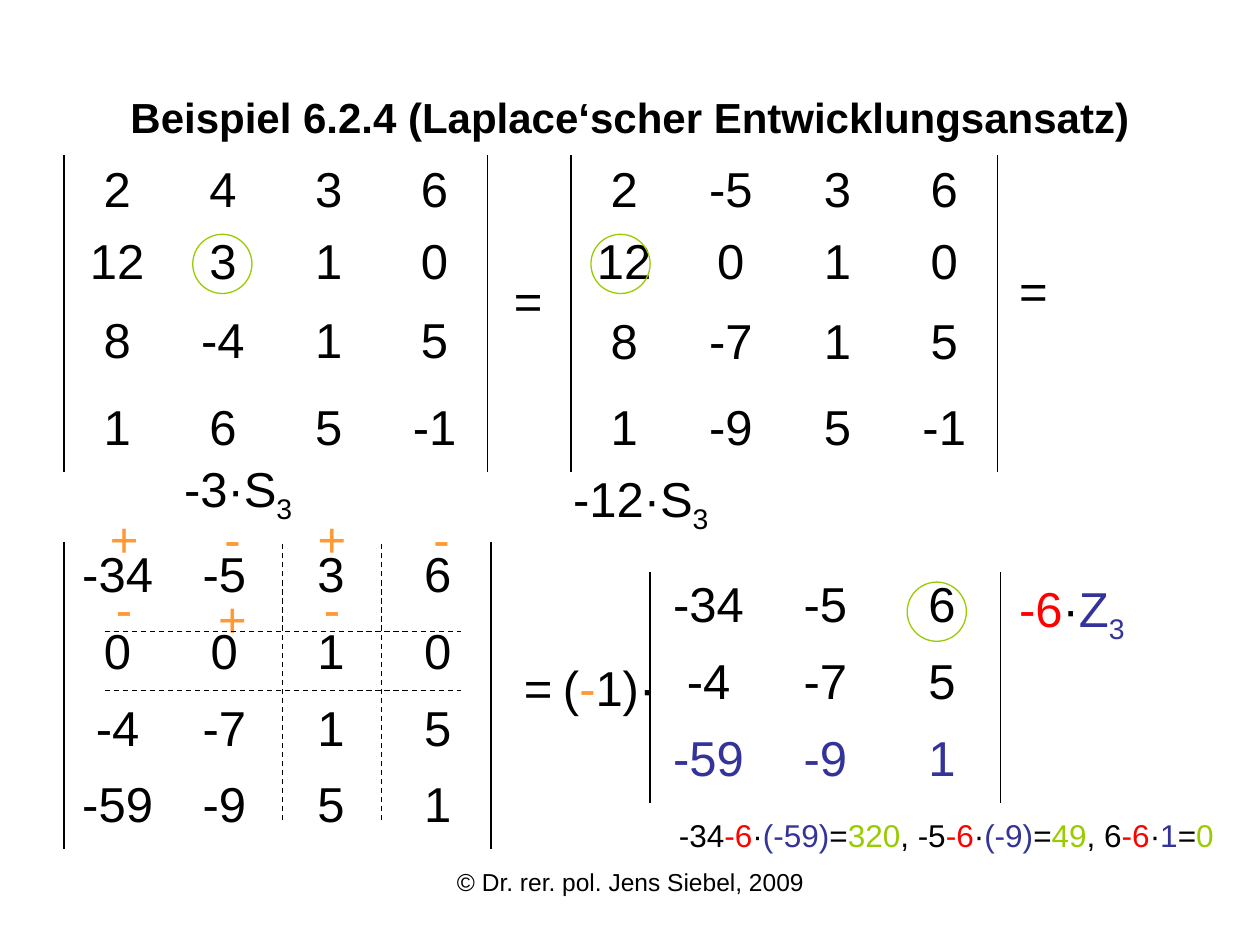
from pptx import Presentation
from pptx.dml.color import RGBColor
from pptx.enum.dml import MSO_LINE
from pptx.enum.shapes import MSO_CONNECTOR, MSO_SHAPE
from pptx.enum.text import MSO_ANCHOR, PP_ALIGN
from pptx.oxml import parse_xml
from pptx.oxml.ns import nsdecls, qn
from pptx.util import Inches, Pt
from lxml.etree import SubElement

BLACK = RGBColor(0x00, 0x00, 0x00)
RED = RGBColor(0xFF, 0x00, 0x00)
BLUE = RGBColor(0x33, 0x33, 0x99)
GREEN = RGBColor(0x99, 0xCC, 0x00)
ORANGE = RGBColor(0xFF, 0x99, 0x33)

LEFT, MID, RIGHT = PP_ALIGN.LEFT, PP_ALIGN.CENTER, PP_ALIGN.RIGHT
COLS, ROWS = 100, 75  # slide grid, ten cells to the inch


class Board:
    """Style and current slide; places are columns and rows of the grid."""

    font = "Arial"
    size = 28
    thin = Pt(0.75)

    def __init__(self, deck):
        self.slide = deck.slides.add_slide(deck.slide_layouts[6])
        self.shapes = self.slide.shapes
        self.dx = deck.slide_width / COLS
        self.dy = deck.slide_height / ROWS

    def place(self, x, y, w, h):
        return (round(x * self.dx), round(y * self.dy),
                round(w * self.dx), round(h * self.dy))

    def letter(self, para, runs, align, size, bold=False):
        """Each run is (text, colour) or (text, colour, 'sub')."""
        para.alignment = align
        para.font.name, para.font.size, para.font.bold = self.font, Pt(size), bold
        for text, color, *low in runs:
            run = para.add_run()
            run.text = text
            run.font.color.rgb = color
            if low:
                run.font._element.set("baseline", "-25000")

    def text(self, x, y, w, h, *runs, align=LEFT, size=size, bold=False,
             anchor=MSO_ANCHOR.TOP):
        frame = self.shapes.add_textbox(*self.place(x, y, w, h)).text_frame
        frame.word_wrap = True
        frame.vertical_anchor = anchor
        self.letter(frame.paragraphs[0], runs, align, size, bold)

    def border(self, cell, sides):
        props = cell._tc.get_or_add_tcPr()
        for side in "LRTB":
            if side in sides:
                xml = ('<a:ln%s %s w="12700"><a:solidFill><a:srgbClr val="%s"/>'
                       '</a:solidFill></a:ln%s>')
                props.append(parse_xml(xml % (side, nsdecls("a"), BLACK, side)))
            else:
                xml = '<a:ln%s %s w="0"><a:noFill/></a:ln%s>'
                props.append(parse_xml(xml % (side, nsdecls("a"), side)))

    def det(self, x, y, wide, highs, rows, anchor=MSO_ANCHOR.TOP, tints={}):
        """Determinant: a table with a bar on its left and right side."""
        n = len(rows[0])
        spot = self.place(x, y, wide * n, sum(highs))
        table = self.shapes.add_table(len(rows), n, *spot).table
        table.first_row = table.horz_banding = False
        for col in table.columns:
            col.width = round(wide * self.dx)
        for i, (row, high) in enumerate(zip(rows, highs)):
            table.rows[i].height = round(high * self.dy)
            for j, value in enumerate(row):
                cell = table.cell(i, j)
                cell.vertical_anchor = anchor
                self.border(cell, "L" * (j == 0) + "R" * (j == n - 1))
                cell.fill.background()
                run = (str(value), tints.get(i, BLACK))
                self.letter(cell.text_frame.paragraphs[0], [run], MID, self.size)

    def dash(self, x1, y1, x2, y2):
        ends = self.place(x1, y1, x2, y2)
        line = self.shapes.add_connector(MSO_CONNECTOR.STRAIGHT, *ends)
        line.line.color.rgb = BLACK
        line.line.width = self.thin
        line.line.dash_style = MSO_LINE.DASH
        SubElement(line._element.spPr, qn("a:effectLst"))

    def ring(self, x, y, d=4.7):
        ring = self.shapes.add_shape(MSO_SHAPE.OVAL, *self.place(x, y, d, d))
        ring.shadow.inherit = False
        ring.fill.background()
        ring.line.color.rgb = GREEN
        ring.line.width = self.thin


def main():
    deck = Presentation()
    deck.slide_width, deck.slide_height = Inches(10), Inches(7.5)
    b = Board(deck)
    equal = ("=", BLACK)

    # Footer and title
    b.text(34.2, 68.3, 31.7, 5.2, ("© Dr. rer. pol. Jens Siebel, 2009", BLACK),
           align=MID, size=14)
    b.text(5, 3, 90, 12.5,
           ("Beispiel 6.2.4 (Laplace‘scher Entwicklungsansatz)", BLACK),
           align=MID, size=24, bold=True, anchor=MSO_ANCHOR.MIDDLE)

    # Upper determinants
    b.det(5.1, 12.3, 8.4, [5.6, 5.6, 6.9, 6.9],
          [[2, 4, 3, 6], [12, 3, 1, 0], [8, -4, 1, 5], [1, 6, 5, -1]],
          MSO_ANCHOR.MIDDLE)
    b.text(39.8, 21, 5.5, 5.7, equal)
    b.det(45.3, 12.3, 8.47, [5.7, 5.7, 6.9, 6.9],
          [[2, -5, 3, 6], [12, 0, 1, 0], [8, -7, 1, 5], [1, -9, 5, -1]],
          MSO_ANCHOR.MIDDLE)
    b.text(79.9, 20.2, 5.5, 5.7, equal)

    # Lower left determinant with its chessboard of signs
    b.det(5.1, 43, 8.47, [6.1] * 4,
          [[-34, -5, 3, 6], [0, 0, 1, 0], [-4, -7, 1, 5], [-59, -9, 5, 1]])
    b.text(40.6, 51.7, 4.7, 5.7, equal)
    for y, signs in ((39.9, "+-+-"), (45.4, "- -"), (46.2, " +")):
        for x, sign in zip((7.5, 16.1, 24, 32.7), signs):
            if sign != " ":
                b.text(x, y, 4.7, 5.7, (sign, ORANGE), align=MID)

    # Column steps
    b.text(44.5, 36.7, 15, 5.7, ("-12·S", BLACK), ("3", BLACK, "sub"))
    b.text(11.4, 35.9, 15, 5.7, ("-3·S", BLACK), ("3", BLACK, "sub"), align=MID)

    # Struck column and row
    for x in (22.4, 30.3):
        b.dash(x, 65.1, x, 43)
    for y in (54.8, 50.1):
        b.dash(8.3, y, 36.6, y)

    # Lower right determinant with factor and row step
    b.text(43.7, 51.7, 9.4, 5.7, ("(", BLACK), ("-", ORANGE), ("1)·", BLACK))
    b.det(51.6, 45.4, 9.27, [6.1] * 3,
          [[-34, -5, 6], [-4, -7, 5], [-59, -9, 1]], tints={2: BLUE})
    step = [("-6", RED), ("·", BLACK)]
    b.text(79.9, 45.4, 15, 5.7, *step, ("Z", BLUE), ("3", BLUE, "sub"))

    # Check of the new first row
    sums = []
    for start, factor, total in (("-34", "(-59)", "320"), (", -5", "(-9)", "49"),
                                 (", 6", "1", "0")):
        sums += [(start, BLACK), *step, (factor, BLUE), equal, (total, GREEN)]
    b.text(52.4, 64.3, 44.9, 4, *sums, align=RIGHT, size=18)

    # Pivot rings
    for x, y in ((15.3, 18.6), (46.9, 18.6), (72, 46.2)):
        b.ring(x, y)

    deck.save("out.pptx")


if __name__ == "__main__":
    main()
